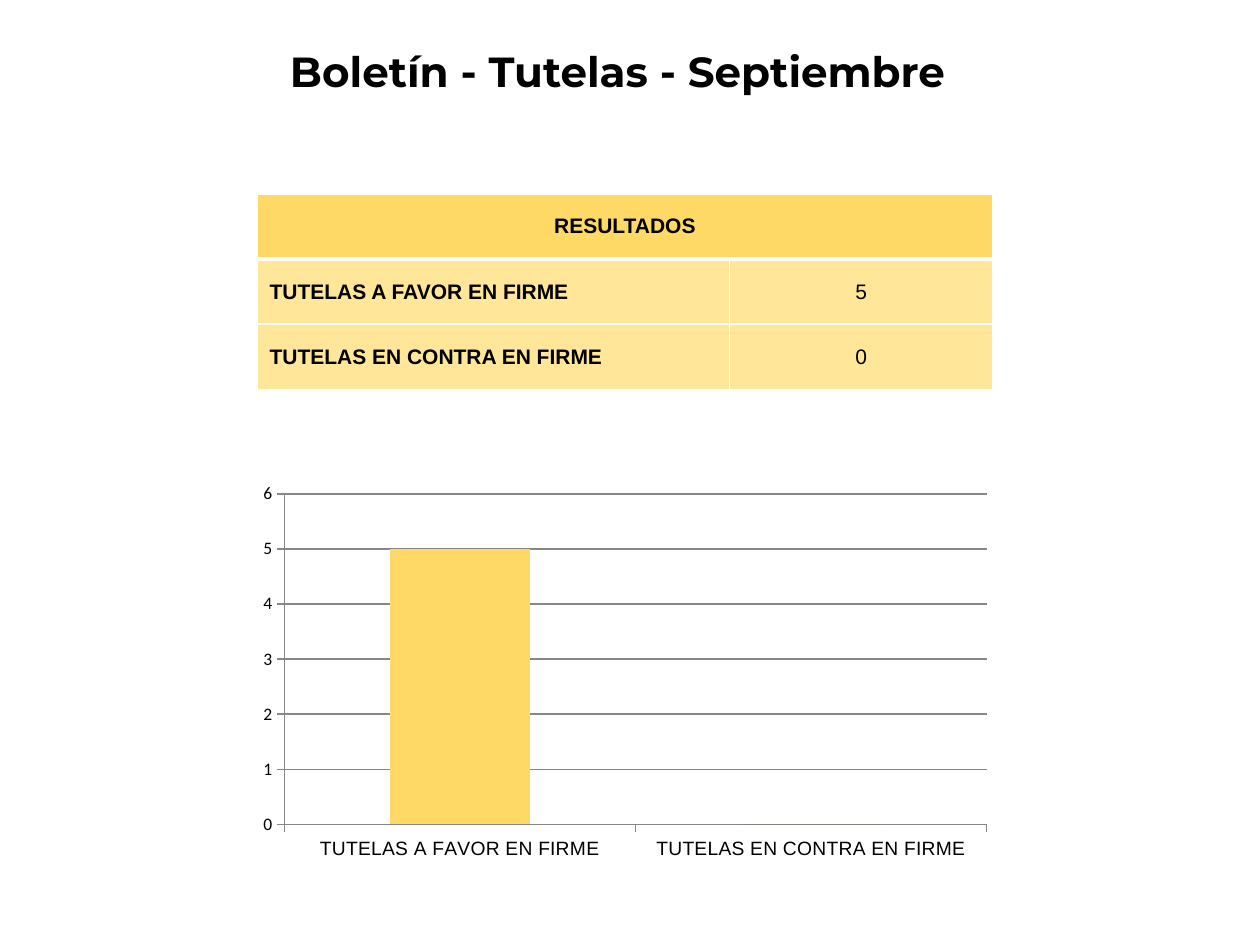
from dataclasses import dataclass

import pptx
import pptx.chart.data
import pptx.dml.color
import pptx.enum.chart
import pptx.enum.text
import pptx.oxml
import pptx.oxml.ns
import pptx.util
from pptx.util import Inches

CENTER = pptx.enum.text.PP_ALIGN.CENTER
LEFT = pptx.enum.text.PP_ALIGN.LEFT
MIDDLE = pptx.enum.text.MSO_ANCHOR.MIDDLE


@dataclass(frozen=True)
class Theme:
    text: str = "000000"
    border: str = "FFFFFF"
    header: str = "FFD966"
    body: str = "FFE699"
    series: str = "5B9BD5"
    bars: tuple = ("FFD966", "548235")
    axis: str = "878787"
    title_font: str = "Montserrat"
    body_font: str = "Arial"
    chart_font: str = "Calibri"
    title_size: int = 24
    table_size: int = 12
    category_size: int = 11
    chart_size: int = 10


THEME = Theme()
RESULTS = {"TUTELAS A FAVOR EN FIRME": 5, "TUTELAS EN CONTRA EN FIRME": 0}


def color(value):
    return pptx.dml.color.RGBColor.from_string(value)


def set_font(font, name, size, bold=False):
    font.name = name
    font.size = pptx.util.Pt(size)
    font.bold = bold
    font.color.rgb = color(THEME.text)


def set_fill(fill, value):
    fill.solid()
    fill.fore_color.rgb = color(value)


def add_title(slide, box, text):
    title = slide.shapes.title
    title.left, title.top, title.width, title.height = box
    frame = title.text_frame
    frame.text = text
    frame.word_wrap = True
    frame.auto_size = pptx.enum.text.MSO_AUTO_SIZE.NONE
    frame.vertical_anchor = MIDDLE
    paragraph = frame.paragraphs[0]
    paragraph.alignment = CENTER
    paragraph.line_spacing = 0.9
    set_font(paragraph.runs[0].font, THEME.title_font, THEME.title_size, True)


def set_borders(cell, **widths):
    """Draw cell borders, with widths in points keyed by L, R, T and B."""
    properties = cell._tc.get_or_add_tcPr()
    for index, (side, width) in enumerate(widths.items()):
        properties.insert(index, pptx.oxml.parse_xml(
            f'<a:ln{side} {pptx.oxml.ns.nsdecls("a")} w="{pptx.util.Pt(width)}">'
            f'<a:solidFill><a:srgbClr val="{THEME.border}"/></a:solidFill></a:ln{side}>'))


def format_cell(cell, text, fill, alignment, bold, top, bottom):
    cell.text = text
    cell.vertical_anchor = MIDDLE
    set_fill(cell.fill, fill)
    set_borders(cell, L=1, R=1, T=top, B=bottom)
    paragraph = cell.text_frame.paragraphs[0]
    paragraph.alignment = alignment
    for run in paragraph.runs:
        set_font(run.font, THEME.body_font, THEME.table_size, bold)


def add_results_table(slide, box, heading, results):
    table = slide.shapes.add_table(len(results) + 1, 2, *box).table
    table.columns[0].width = Inches(3.75)
    table.columns[1].width = box[2] - Inches(3.75)

    header = table.cell(0, 0)
    header.merge(table.cell(0, 1))
    for cell, text in zip(table.rows[0].cells, (heading, "")):
        format_cell(cell, text, THEME.header, CENTER, True, 1, 3)

    for row, (label, value) in enumerate(results.items(), start=1):
        top = 3 if row == 1 else 1
        format_cell(table.cell(row, 0), label, THEME.body, LEFT, True, top, 1)
        format_cell(table.cell(row, 1), str(value), THEME.body, CENTER, False, top, 1)


def add_results_chart(slide, box, results):
    data = pptx.chart.data.CategoryChartData()
    data.categories = list(results)
    data.add_series("Series 1", list(results.values()))
    chart = slide.shapes.add_chart(
        pptx.enum.chart.XL_CHART_TYPE.COLUMN_CLUSTERED, *box, data).chart
    chart.has_legend = False
    chart.has_title = False
    set_font(chart.font, THEME.chart_font, THEME.chart_size)

    plot = chart.plots[0]
    plot.gap_width = 150
    plot.vary_by_categories = False
    series = plot.series[0]
    set_fill(series.format.fill, THEME.series)
    for index, bar in enumerate(THEME.bars):
        set_fill(series.points[index].format.fill, bar)

    value_axis, category_axis = chart.value_axis, chart.category_axis
    value_axis.minimum_scale = 0
    value_axis.maximum_scale = 6
    value_axis.major_unit = 1
    value_axis.has_major_gridlines = True
    set_font(value_axis.tick_labels.font, THEME.chart_font, THEME.chart_size)
    set_font(category_axis.tick_labels.font, THEME.body_font, THEME.category_size)
    for axis in (value_axis, category_axis):
        axis.major_tick_mark = pptx.enum.chart.XL_TICK_MARK.OUTSIDE
    for part in (value_axis, category_axis, value_axis.major_gridlines):
        part.format.line.color.rgb = color(THEME.axis)
        part.format.line.width = pptx.util.Pt(0.75)


def main():
    presentation = pptx.Presentation()
    presentation.slide_width = Inches(10)
    presentation.slide_height = Inches(7.5)
    slide = presentation.slides.add_slide(presentation.slide_layouts[5])
    set_fill(slide.background.fill, "FFFFFF")

    add_title(slide, (Inches(0.49), Inches(0.31), Inches(8.82), Inches(0.56)),
              "Boletín - Tutelas - Septiembre")
    add_results_table(slide, (Inches(2.04), Inches(1.54), Inches(5.84), Inches(1.55)),
                      "RESULTADOS", RESULTS)
    add_results_chart(slide, (Inches(1.97), Inches(3.78), Inches(5.98), Inches(3.1)),
                      RESULTS)
    presentation.save("out.pptx")


if __name__ == "__main__":
    main()
